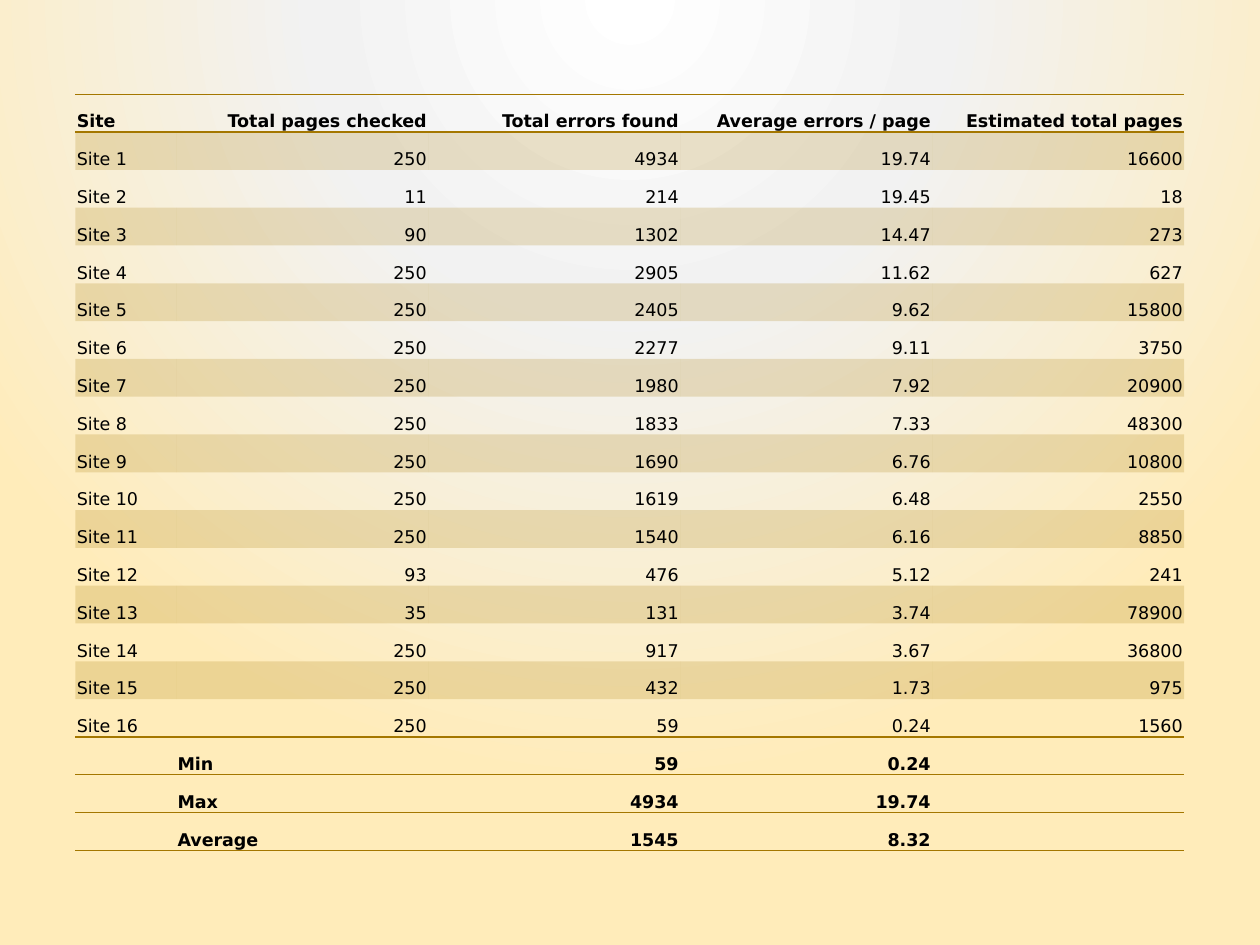
from typing import NamedTuple

from pptx import Presentation
from pptx.dml.color import RGBColor
from pptx.enum.text import MSO_ANCHOR, PP_ALIGN
from pptx.oxml import parse_xml
from pptx.oxml.ns import nsdecls, qn
from pptx.util import Cm, Pt

BLACK = RGBColor(0x00, 0x00, 0x00)
OCHRE = RGBColor(0xA4, 0x77, 0x00)
GLOW = {0: RGBColor(0xFF, 0xFF, 0xFF), 40: RGBColor(0xF2, 0xF2, 0xF2), 100: RGBColor(0xFF, 0xEC, 0xBA)}
NO_STYLE = "{2D5ABB26-0587-4C30-8999-92F81FD0307C}"
COLUMN_WIDTHS = [Cm(2.03)] + [Cm(5.08)] * 4
TABLE_HEIGHT = Cm(15.24)
CELL_FORMAT = {
    "vertical_anchor": MSO_ANCHOR.BOTTOM,
    "margin_left": Cm(0.03),
    "margin_right": Cm(0.03),
    "margin_top": Cm(0.03),
    "margin_bottom": 0,
}
FONT_FORMAT = {"name": "DejaVu Sans", "size": Pt(10)}


class Row(NamedTuple):
    """A table row with its emphasis, shading and ruled edges."""

    values: tuple[str, ...]
    bold: bool = False
    shaded: bool = False
    edges: str = ""


HEADINGS = ("Site", "Total pages checked", "Total errors found", "Average errors / page", "Estimated total pages")
SITES = [
    ("250", "4934", "19.74", "16600"),
    ("11", "214", "19.45", "18"),
    ("90", "1302", "14.47", "273"),
    ("250", "2905", "11.62", "627"),
    ("250", "2405", "9.62", "15800"),
    ("250", "2277", "9.11", "3750"),
    ("250", "1980", "7.92", "20900"),
    ("250", "1833", "7.33", "48300"),
    ("250", "1690", "6.76", "10800"),
    ("250", "1619", "6.48", "2550"),
    ("250", "1540", "6.16", "8850"),
    ("93", "476", "5.12", "241"),
    ("35", "131", "3.74", "78900"),
    ("250", "917", "3.67", "36800"),
    ("250", "432", "1.73", "975"),
    ("250", "59", "0.24", "1560"),
]
SUMMARY = [
    Row(("", "Min", "59", "0.24", ""), bold=True, edges="TB"),
    Row(("", "Max", "4934", "19.74", ""), bold=True, edges="T"),
    Row(("", "Average", "1545", "8.32", ""), bold=True, edges="B"),
]


def collect_rows() -> list[Row]:
    """Return the heading, site and summary rows in order."""
    sites = [
        Row((f"Site {number}", *values), shaded=number % 2 == 1, edges="B" if number == len(SITES) else "")
        for number, values in enumerate(SITES, 1)
    ]
    return [Row(HEADINGS, bold=True, edges="TB"), *sites, *SUMMARY]


def apply_format(target, values: dict) -> None:
    """Set each named attribute on the target."""
    for name, value in values.items():
        setattr(target, name, value)


def paint_background(page) -> None:
    """Give the page a radial glow centred above its top edge."""
    stops = "".join(
        f'<a:gs pos="{position * 1000}"><a:srgbClr val="{color}"/></a:gs>' for position, color in GLOW.items()
    )
    background = parse_xml(
        f'<p:bg {nsdecls("p", "a")}><p:bgPr><a:gradFill rotWithShape="1"><a:gsLst>{stops}</a:gsLst>'
        '<a:path path="circle"><a:fillToRect l="50000" t="-80000" r="50000" b="180000"/></a:path>'
        "</a:gradFill><a:effectLst/></p:bgPr></p:bg>"
    )
    page.element.find(qn("p:cSld")).insert(0, background)


def shade_cell(cell) -> None:
    """Fill the cell with translucent ochre."""
    cell.fill.solid()
    cell.fill.fore_color.rgb = OCHRE
    color = cell._tc.tcPr.find(qn("a:solidFill"))[0]
    color.append(parse_xml(f'<a:alpha {nsdecls("a")} val="20000"/>'))


def rule_cell(cell, edges: str) -> None:
    """Draw a line on each lettered edge of the cell."""
    for index, edge in enumerate(edges):
        line = parse_xml(
            f'<a:ln{edge} {nsdecls("a")} w="{Pt(1)}"><a:solidFill><a:srgbClr val="{OCHRE}"/></a:solidFill></a:ln{edge}>'
        )
        cell._tc.tcPr.insert(index, line)


def write_cell(cell, text: str, row: Row, alignment: PP_ALIGN) -> None:
    """Write one cell with its text, fill and rules."""
    apply_format(cell, CELL_FORMAT)
    para = cell.text_frame.paragraphs[0]
    para.alignment = alignment
    span = para.add_run()
    span.text = text
    apply_format(span.font, FONT_FORMAT | {"bold": row.bold})
    span.font.color.rgb = BLACK
    if row.shaded:
        shade_cell(cell)
    else:
        cell.fill.background()
    rule_cell(cell, row.edges)


def add_error_table(page, rows: list[Row]) -> None:
    """Place the table of errors per site on the page."""
    frame = page.shapes.add_table(
        len(rows), len(COLUMN_WIDTHS), Cm(1.52), Cm(1.9), sum(COLUMN_WIDTHS), TABLE_HEIGHT
    )
    table = frame.table
    apply_format(table, {"first_row": False, "horz_banding": False})
    table._tbl.tblPr.find(qn("a:tableStyleId")).text = NO_STYLE
    for column, width in zip(table.columns, COLUMN_WIDTHS):
        column.width = width
    for line, row in zip(table.rows, rows):
        line.height = TABLE_HEIGHT // len(rows)
        for index, (cell, text) in enumerate(zip(line.cells, row.values)):
            is_label = index == 0 or (row in SUMMARY and index == 1)
            write_cell(cell, text, row, PP_ALIGN.LEFT if is_label else PP_ALIGN.RIGHT)


def main() -> None:
    """Build and save the deck."""
    deck = Presentation()
    apply_format(deck, {"slide_width": Cm(25.4), "slide_height": Cm(19.05)})
    page = deck.slides.add_slide(deck.slide_layouts[6])
    paint_background(page)
    add_error_table(page, collect_rows())
    deck.save("out.pptx")


if __name__ == "__main__":
    main()
